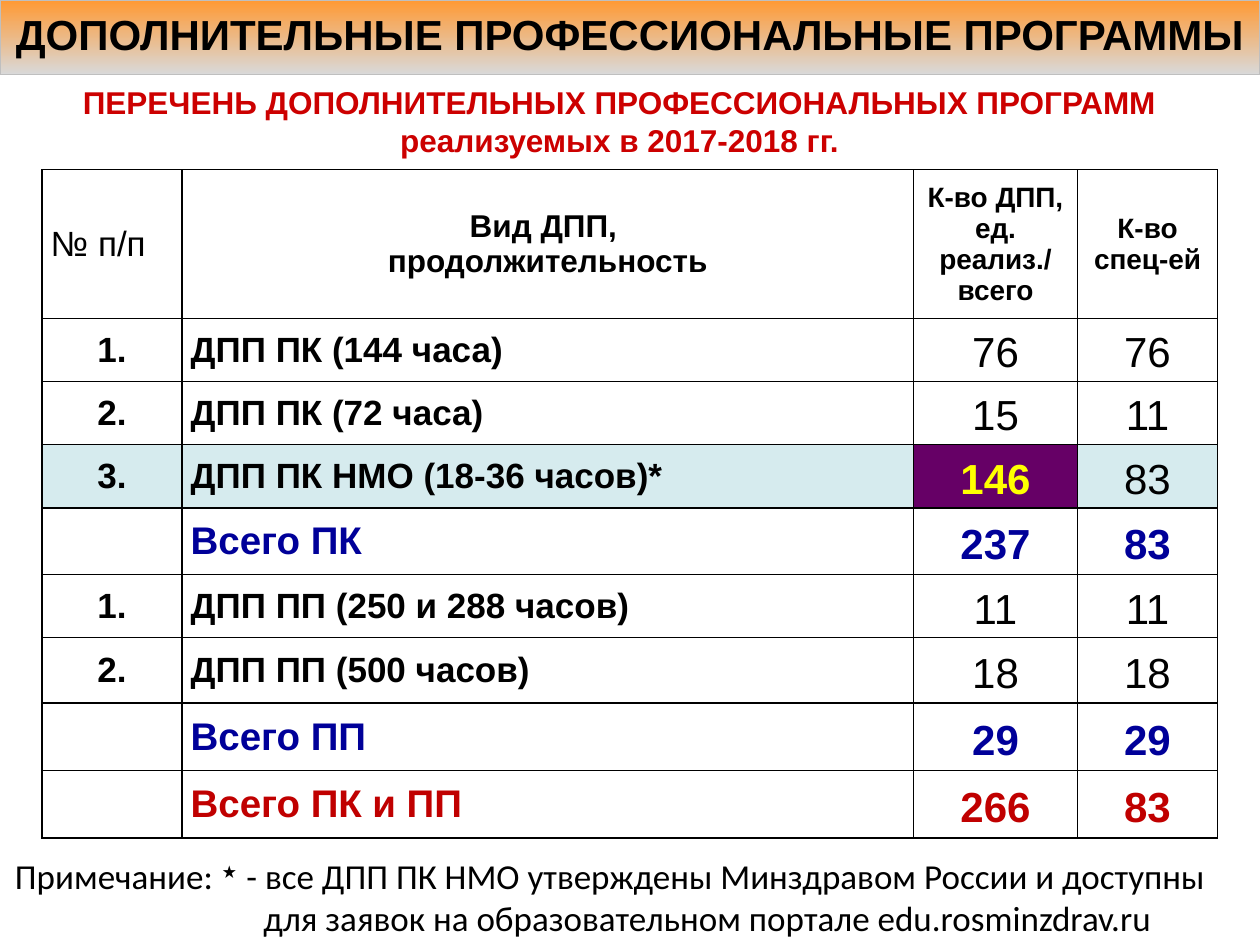
from lxml import etree
from pptx import Presentation
from pptx.dml.color import RGBColor
from pptx.enum import shapes, text
from pptx.oxml.ns import qn
from pptx.util import Pt

BLACK, RED, BLUE, DARK_RED = "000000", "CC0000", "000099", "C00000"
PALE, PURPLE, YELLOW = "D6EBEE", "660066", "FFFF00"
LEFT, CENTER = text.PP_ALIGN.LEFT, text.PP_ALIGN.CENTER

COLUMN_WIDTHS = [80, 418, 93.75, 80]
ROW_HEIGHTS = [84.9, 36, 36, 36.5, 38, 36, 37.5, 38.5, 38.5]
# Header text, size, bold, alignment, horizontal and vertical margin
HEADERS = [
    ("№ п/п", 20, False, LEFT, 5, 2.5),
    ("Вид ДПП, \nпродолжительность", 18, True, CENTER, 5, 2.5),
    ("К-во ДПП, ед.\nреализ./\nвсего", 16, True, CENTER, 0, 0),
    ("К-во спец-ей", 16, True, CENTER, 0, 0),
]
# Number, programme, programme count, speciality count, colour of a total
PROGRAMMES = [
    ("1.", "ДПП ПК (144 часа)", "76", "76", None),
    ("2.", "ДПП ПК (72 часа)", "15", "11", None),
    ("3.", "ДПП ПК НМО (18-36 часов)*", "146", "83", None),
    ("", "Всего ПК", "237", "83", BLUE),
    ("1.", "ДПП ПП (250 и 288 часов)", "11", "11", None),
    ("2.", "ДПП ПП (500 часов)", "18", "18", None),
    ("", "Всего ПП", "29", "29", BLUE),
    ("", "Всего ПК и ПП", "266", "83", DARK_RED),
]
HIGHLIGHTED_ROW = 3


def rgb(value):
    return RGBColor.from_string(value)


def write(frame, content, size, color=BLACK, bold=False, align=LEFT,
          font="Arial", spacing=None):
    frame.word_wrap = True
    frame.text = content
    for paragraph in frame.paragraphs:
        paragraph.alignment = align
        paragraph.line_spacing = spacing
        paragraph.font.name = font
        paragraph.font.size = Pt(size)
        paragraph.font.bold = bold
        paragraph.font.color.rgb = rgb(color)


def hang(paragraph, indent):
    properties = paragraph._p.get_or_add_pPr()
    properties.set("marL", str(Pt(indent)))
    properties.set("indent", str(-Pt(indent)))


def add_title(slide, box):
    banner = slide.shapes.add_shape(shapes.MSO_SHAPE.RECTANGLE, *map(Pt, box))
    banner.shadow.inherit = False
    banner.fill.gradient()
    banner.fill.gradient_angle = 270
    for stop, color in zip(banner.fill.gradient_stops, ("FF9933", "D9D9D9")):
        stop.color.rgb = rgb(color)
    banner.line.color.rgb = rgb("BFBFBF")
    banner.line.width = Pt(0.75)
    frame = banner.text_frame
    frame.margin_left = frame.margin_right = Pt(3.6)
    frame.vertical_anchor = text.MSO_ANCHOR.MIDDLE
    write(frame, "ДОПОЛНИТЕЛЬНЫЕ ПРОФЕССИОНАЛЬНЫЕ ПРОГРАММЫ", 24,
          bold=True, align=CENTER, spacing=0.9)
    hang(frame.paragraphs[0], 27)


def add_subtitle(slide, box):
    frame = slide.shapes.add_textbox(*map(Pt, box)).text_frame
    write(frame, "ПЕРЕЧЕНЬ ДОПОЛНИТЕЛЬНЫХ ПРОФЕССИОНАЛЬНЫХ ПРОГРАММ\v"
          "реализуемых в 2017-2018 гг.", 18, RED, True, CENTER)


def add_note(slide, box):
    frame = slide.shapes.add_textbox(*map(Pt, box)).text_frame
    write(frame, "Примечание: ٭ - все ДПП ПК НМО утверждены Минздравом России "
          "и доступны для заявок на образовательном портале "
          "edu.rosminzdrav.ru", 20, font="Calibri")
    hang(frame.paragraphs[0], 142)


def set_borders(cell):
    properties = cell._tc.get_or_add_tcPr()
    for side in ("lnL", "lnR", "lnT", "lnB"):
        line = etree.SubElement(properties, qn(f"a:{side}"), w=str(Pt(1)))
        fill = etree.SubElement(line, qn("a:solidFill"))
        etree.SubElement(fill, qn("a:srgbClr"), val=BLACK)


def fill_cell(cell, content, horizontal, vertical, background=None, **style):
    set_borders(cell)
    if background:
        cell.fill.solid()
        cell.fill.fore_color.rgb = rgb(background)
    else:
        cell.fill.background()
    cell.margin_left = cell.margin_right = Pt(horizontal)
    cell.margin_top = cell.margin_bottom = Pt(vertical)
    cell.vertical_anchor = text.MSO_ANCHOR.MIDDLE
    write(cell.text_frame, content, **style)


def fill_programme_row(table, row, number, name, programmes, specialities, total):
    color = total or BLACK
    background = PALE if row == HIGHLIGHTED_ROW else None
    fill_cell(table.cell(row, 0), number, 5, 2.5, background,
              size=20, bold=True, align=CENTER)
    fill_cell(table.cell(row, 1), name, 5, 2.5, background,
              size=22 if total else 20, color=color, bold=True)
    for column, count in ((2, programmes), (3, specialities)):
        accent = row == HIGHLIGHTED_ROW and column == 2
        fill_cell(table.cell(row, column), count, 1.5, 0,
                  PURPLE if accent else background, size=24,
                  color=YELLOW if accent else color,
                  bold=accent or bool(total), align=CENTER, spacing=1.15)


def add_programme_table(slide, box):
    table = slide.shapes.add_table(
        len(ROW_HEIGHTS), len(COLUMN_WIDTHS), *map(Pt, box)).table
    table.first_row = table.horz_banding = False
    for column, width in zip(table.columns, COLUMN_WIDTHS):
        column.width = Pt(width)
    for row, height in zip(table.rows, ROW_HEIGHTS):
        row.height = Pt(height)
    for column, (label, size, bold, align, horizontal, vertical) in enumerate(HEADERS):
        fill_cell(table.cell(0, column), label, horizontal, vertical,
                  size=size, bold=bold, align=align)
    for row, programme in enumerate(PROGRAMMES, start=1):
        fill_programme_row(table, row, *programme)


def main():
    presentation = Presentation()
    presentation.slide_width, presentation.slide_height = Pt(720), Pt(540)
    slide = presentation.slides.add_slide(presentation.slide_layouts[6])
    add_title(slide, (0, 0, 720, 42.5))
    add_subtitle(slide, (-18, 44, 744, 50))
    add_note(slide, (1.5, 485, 717, 55.5))
    add_programme_table(slide, (24, 97, 671.75, 382))
    presentation.save("out.pptx")


if __name__ == "__main__":
    main()
